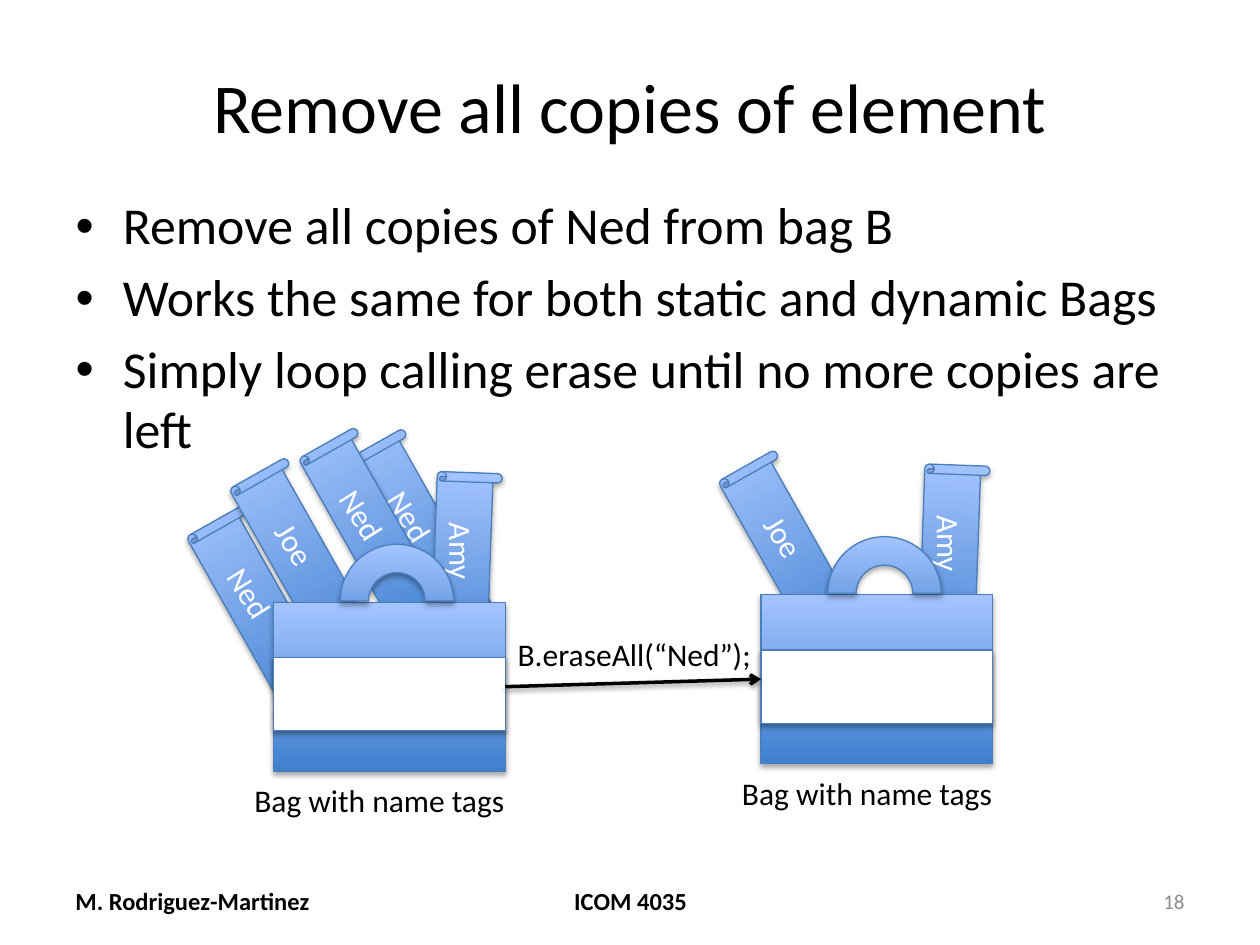
from lxml import etree
from pptx import Presentation, util as u
from pptx.dml.color import RGBColor
from pptx.enum import shapes, text
from pptx.oxml import ns

# Content
TITLE = "Remove all copies of element"
BULLETS = [
    "Remove all copies of Ned from bag B",
    "Works the same for both static and dynamic Bags",
    "Simply loop calling erase until no more copies are left",
]
CALL = "B.eraseAll(“Ned”);"
CAPTION = "Bag with name tags"
# Each bag: its corner, then tags from back to front as (name, left, top)
BAGS = [
    ((2.17, 4.78), [("Ned", 1.77, 4.05), ("Ned", 3.04, 3.44), ("Joe", 2.11, 3.67),
                    ("Ned", 2.66, 3.43), ("Amy", 3.37, 3.75)]),
    ((6.04, 4.72), [("Joe", 5.99, 3.61), ("Amy", 7.24, 3.69)]),
]
# Per name: scroll angle, text angle, text width, shift of text centre
TAGS = {
    "Ned": (330.5, 57.8, 0.62, (-0.08, -0.14)),
    "Joe": (330.5, 57.8, 0.54, (-0.06, -0.15)),
    "Amy": (2, 89.3, 0.66, (0, -0.17)),
}
COLORS = {"ink": "000000", "white": "FFFFFF", "grey": "8C8C8C",
          "dark": "3F80CE", "light": "A4C4FF", "edge": "4B7EBC"}
FONT = "Calibri"
WIDTH, HEIGHT = 10, 7.5
MARGIN = WIDTH * 0.05
TAG_W, TAG_H = 0.59, 1.6
BAG_W, BAG_H = 1.84, 1.34
LABEL_H = 0.4
ALIGN = text.PP_ALIGN
SHAPE = shapes.MSO_SHAPE


def rgb(name):
    return RGBColor.from_string(COLORS[name])


def inches(*values):
    return [u.Inches(value) for value in values]


def write(para, words, size, color="ink", bold=False):
    span = para.add_run()
    span.text = words
    span.font.name, span.font.size, span.font.bold = FONT, u.Pt(size), bold
    span.font.color.rgb = rgb(color)


def add_label(words, left, top, width, size=18, color="ink", bold=False,
              align=ALIGN.LEFT, wrap=False, anchor=text.MSO_ANCHOR.TOP):
    box = page.shapes.add_textbox(*inches(left, top, width, LABEL_H))
    box.text_frame.word_wrap = wrap
    box.text_frame.vertical_anchor = anchor
    para = box.text_frame.paragraphs[0]
    para.alignment = align
    write(para, words, size, color, bold)
    return box


def add_shadow(shape, opacity, distance):
    effects = etree.SubElement(shape._element.spPr, ns.qn("a:effectLst"))
    shadow = etree.SubElement(effects, ns.qn("a:outerShdw"), blurRad=str(u.Pt(3.1)),
                              dist=str(u.Pt(distance)), dir="5400000", rotWithShape="0")
    tint = etree.SubElement(shadow, ns.qn("a:srgbClr"), val=COLORS["ink"])
    etree.SubElement(tint, ns.qn("a:alpha"), val=str(opacity * 1000))


def add_part(kind, left, top, width, height, plain=False):
    shape = page.shapes.add_shape(kind, *inches(left, top, width, height))
    if plain:
        shape.fill.solid()
        shape.fill.fore_color.rgb = rgb("white")
    else:
        shape.fill.gradient()
        shape.fill.gradient_angle = 90
        for stop, name, place in zip(shape.fill.gradient_stops, ("dark", "light"), (0, 1)):
            stop.color.rgb, stop.position = rgb(name), place
    shape.line.color.rgb, shape.line.width = rgb("edge"), u.Pt(0.75)
    add_shadow(shape, 35, 1.8)
    return shape


def add_tag(name, left, top):
    angle, text_angle, width, (dx, dy) = TAGS[name]
    add_part(SHAPE.VERTICAL_SCROLL, left, top, TAG_W, TAG_H).rotation = angle
    label = add_label(name, left + (TAG_W - width) / 2 + dx,
                      top + (TAG_H - LABEL_H) / 2 + dy, width, color="white")
    label.rotation = text_angle


def add_bag(left, top):
    handle = 0.9
    add_part(SHAPE.RECTANGLE, left, top, BAG_W, BAG_H)
    add_part(SHAPE.BLOCK_ARC, left + 0.53, top - 0.46, handle, handle)
    add_part(SHAPE.RECTANGLE, left, top + 0.44, BAG_W, 0.58, plain=True)
    add_label(CAPTION, left - 0.25, top + BAG_H + 0.03, 2.21)


deck = Presentation()
deck.slide_width, deck.slide_height = inches(WIDTH, HEIGHT)
page = deck.slides.add_slide(deck.slide_layouts[1])

# Title and bullets
title, body = page.placeholders
for holder, top, height in ((title, 0.3, 1.07), (body, 1.51, 2.12)):
    holder.left, holder.top, holder.width, holder.height = inches(
        MARGIN, top, WIDTH - 2 * MARGIN, height)
    holder.text_frame.auto_size = text.MSO_AUTO_SIZE.NONE
write(title.text_frame.paragraphs[0], TITLE, 40)
for index, words in enumerate(BULLETS):
    frame = body.text_frame
    para = frame.add_paragraph() if index else frame.paragraphs[0]
    para.line_spacing, para.space_before = 0.97, u.Pt(6.5)
    write(para, words, 29.6)

# Bags with their tags
for corner, tags in BAGS:
    for tag in tags:
        add_tag(*tag)
    add_bag(*corner)

# Arrow from the first bag to the second
(x1, y1), (x2, y2) = (corner for corner, _ in BAGS)
arrow = page.shapes.add_connector(
    shapes.MSO_CONNECTOR.STRAIGHT,
    *inches(x1 + BAG_W, y1 + BAG_H / 2, x2, y2 + BAG_H / 2))
arrow.line.color.rgb, arrow.line.width = rgb("ink"), u.Pt(2)
etree.SubElement(arrow.line._get_or_add_ln(), ns.qn("a:tailEnd"), type="arrow")
add_shadow(arrow, 38, 1.6)
add_label(CALL, x1 + BAG_W, 4.99, 2.08)

# Footer
FOOTER = [
    ("M. Rodriguez-Martinez", MARGIN, 2.33, 14, "ink", True, ALIGN.LEFT),
    ("ICOM 4035", 3.42, 3.17, 14, "ink", True, ALIGN.CENTER),
    ("18", 7.17, 2.33, 12, "grey", False, ALIGN.RIGHT),
]
for words, left, width, size, color, bold, align in FOOTER:
    add_label(words, left, 6.95, width, size, color, bold, align,
              wrap=True, anchor=text.MSO_ANCHOR.MIDDLE)

deck.save("out.pptx")
